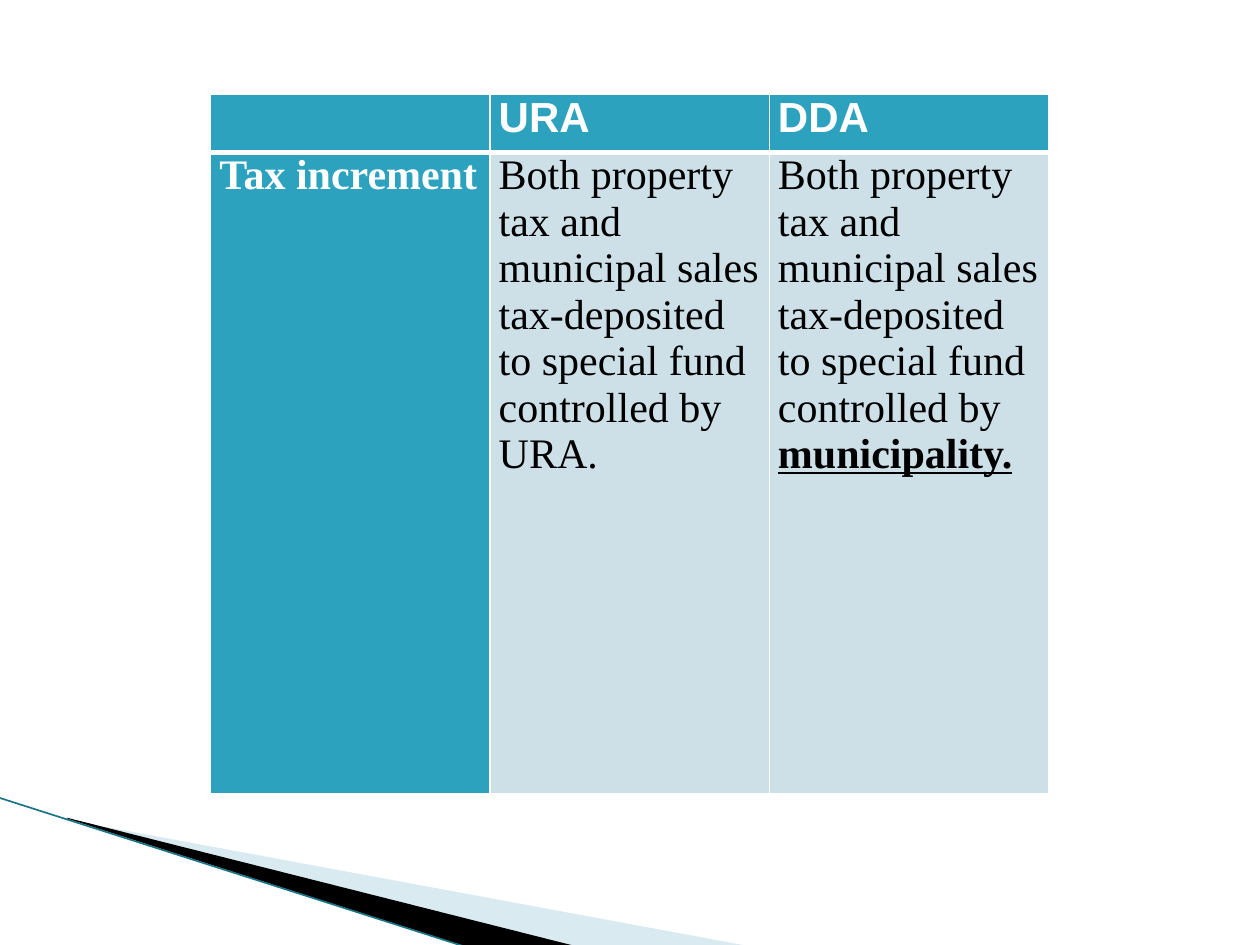
"""Build a slide comparing tax increment financing for URA and DDA."""
from lxml.etree import SubElement
from pptx import Presentation
from pptx.dml.color import RGBColor
from pptx.enum.shapes import MSO_CONNECTOR
from pptx.oxml import parse_xml
from pptx.oxml.ns import nsdecls, qn
from pptx.util import Pt

WHITE = RGBColor(0xFF, 0xFF, 0xFF)
BLACK = RGBColor(0, 0, 0)
TEAL = RGBColor(0x2D, 0xA2, 0xBF)
PALE_TEAL = RGBColor(0xCD, 0xE0, 0xE8)
WEDGE_BLUE = RGBColor(0xA0, 0xCB, 0xDC)
EDGE_TEAL = RGBColor(0x1B, 0x75, 0x87)

SHARED_TEXT = ("Both property tax and municipal sales tax-deposited "
               "to special fund controlled by ")
ROWS = [
    ["", "URA", "DDA"],
    ["Tax increment", SHARED_TEXT + "URA.", SHARED_TEXT],
]
EMPHASIS = {(1, 2): "municipality."}
ROW_HEIGHTS = [33.12, 366.48]
TABLE_LEFT, TABLE_TOP, TABLE_WIDTH = 120.4, 54, 478.8
FONT_SIZE = 24
THIN, THICK = 1, 3

WEDGES = [
    ([(39.6, 468.7), (428.4, 540.7), (328.3, 540.7), (39.6, 468)], WEDGE_BLUE, 40),
    ([(38.2, 467.3), (329, 540.7), (267.8, 541.4), (38.9, 468)], BLACK, 100),
]
EDGE = (-0.7, 455.8, 267.1, 541.4)


def add_wedge(slide, points, color, opacity):
    builder = slide.shapes.build_freeform(Pt(points[0][0]), Pt(points[0][1]))
    builder.add_line_segments([(Pt(x), Pt(y)) for x, y in points[1:]])
    shape = builder.convert_to_shape()
    shape.shadow.inherit = False
    shape.fill.solid()
    shape.fill.fore_color.rgb = color
    shape.line.fill.background()
    if opacity < 100:
        color_element = shape.fill._xPr.find(qn("a:solidFill"))[0]
        SubElement(color_element, qn("a:alpha"), val=str(opacity * 1000))


def add_edge(slide):
    line = slide.shapes.add_connector(MSO_CONNECTOR.STRAIGHT, *map(Pt, EDGE))
    line.line.color.rgb = EDGE_TEAL
    line.line.width = Pt(0.95)
    SubElement(line._element.spPr, qn("a:effectLst"))


def set_borders(cell, widths):
    properties = cell._tc.get_or_add_tcPr()
    for index, (side, width) in enumerate(zip("LRTB", widths)):
        properties.insert(index, parse_xml(
            f'<a:ln{side} {nsdecls("a")} w="{Pt(width)}"><a:solidFill>'
            f'<a:srgbClr val="{WHITE}"/></a:solidFill></a:ln{side}>'))


def fill_cell(cell, row, column):
    is_heading = row == 0 or column == 0
    cell.margin_left = cell.margin_right = Pt(5)
    cell.margin_top = cell.margin_bottom = 0
    cell.fill.solid()
    cell.fill.fore_color.rgb = TEAL if is_heading else PALE_TEAL
    set_borders(cell, (THIN, THIN, THICK if row else THIN, THIN if row else THICK))
    paragraph = cell.text_frame.paragraphs[0]
    font = paragraph.font
    font.size = Pt(FONT_SIZE)
    font.name = "Times New Roman" if row else "Arial"
    font.bold = is_heading
    font.color.rgb = WHITE if is_heading else BLACK
    if ROWS[row][column]:
        paragraph.add_run().text = ROWS[row][column]
    if (row, column) in EMPHASIS:
        run = paragraph.add_run()
        run.text = EMPHASIS[row, column]
        run.font.bold = run.font.underline = True


def add_comparison_table(slide):
    column_count = len(ROWS[0])
    table = slide.shapes.add_table(
        len(ROWS), column_count, Pt(TABLE_LEFT), Pt(TABLE_TOP),
        Pt(TABLE_WIDTH), Pt(sum(ROW_HEIGHTS))).table
    for column in table.columns:
        column.width = Pt(TABLE_WIDTH / column_count)
    for row, height in enumerate(ROW_HEIGHTS):
        table.rows[row].height = Pt(height)
        for column in range(column_count):
            fill_cell(table.cell(row, column), row, column)


def main():
    presentation = Presentation()
    presentation.slide_width, presentation.slide_height = Pt(720), Pt(540)
    slide = presentation.slides.add_slide(presentation.slide_layouts[6])
    for wedge in WEDGES:
        add_wedge(slide, *wedge)
    add_edge(slide)
    add_comparison_table(slide)
    presentation.save("out.pptx")


if __name__ == "__main__":
    main()
